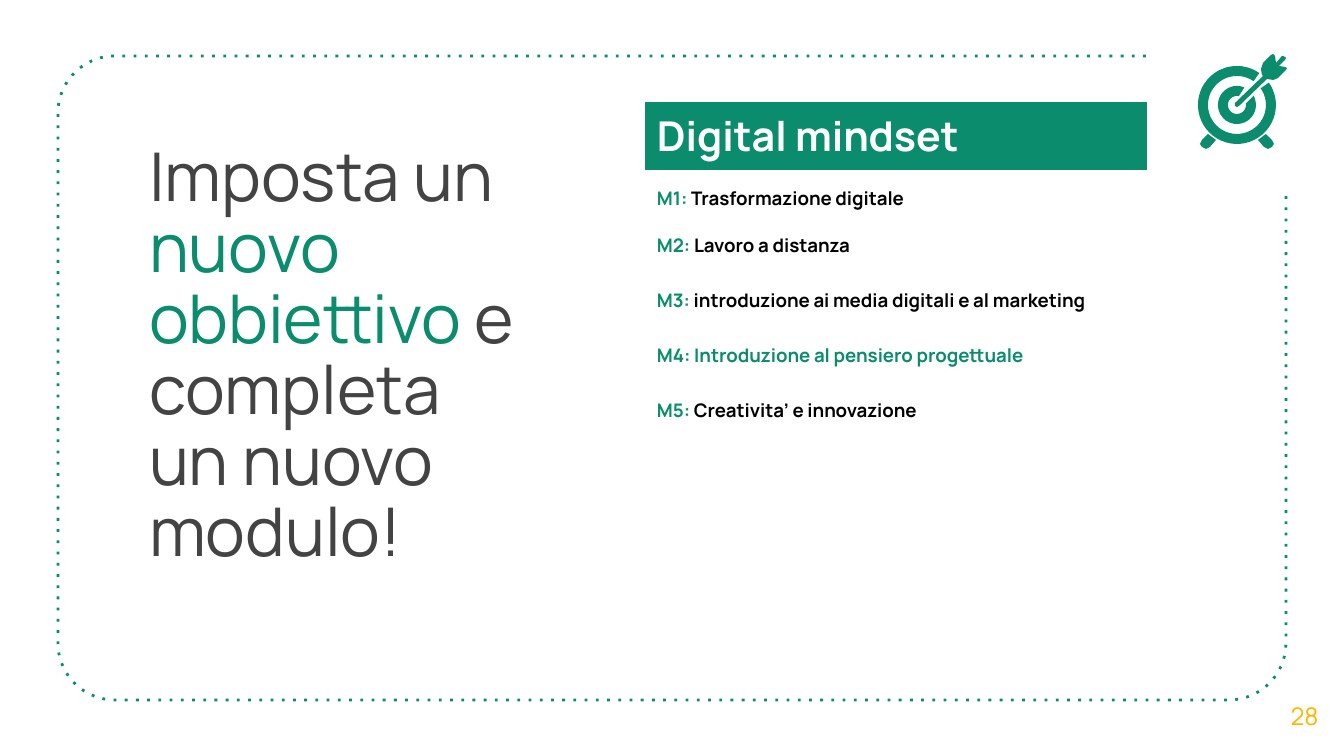
from dataclasses import dataclass
from math import cos, radians, sin

from pptx import Presentation
from pptx.dml.color import RGBColor
from pptx.enum.dml import MSO_LINE
from pptx.enum.text import MSO_ANCHOR, MSO_AUTO_SIZE, PP_ALIGN
from pptx.oxml.ns import qn
from pptx.util import Pt

TOP, MIDDLE = MSO_ANCHOR.TOP, MSO_ANCHOR.MIDDLE
LEFT, CENTER = PP_ALIGN.LEFT, PP_ALIGN.CENTER
DOT = MSO_LINE.ROUND_DOT
NO_FIT = MSO_AUTO_SIZE.NONE
SCALE = 914400 / 134.4


@dataclass(frozen=True)
class Theme:
    font: str = "Manrope"
    green: str = "0A8C6D"
    gray: str = "434343"
    gold: str = "FFB600"
    white: str = "FFFFFF"
    black: str = "000000"
    title: int = 36
    head: int = 22
    item: int = 10
    number: int = 13


THEME = Theme()

MODULES = [
    ("M1: ", "Trasformazione digitale", THEME.black),
    ("M2: ", "Lavoro a distanza", THEME.black),
    ("M3: ", "introduzione ai media digitali e al marketing", THEME.black),
    ("M4: ", "Introduzione al pensiero progettuale", THEME.green),
    ("M5: ", "Creativita’ e innovazione", THEME.black),
]

FOOT = [(1208, 134), (1202, 140), (1200, 144), (1202, 147), (1206, 149),
        (1210, 147), (1216, 140), (1212, 137)]
DART = [(1273, 54), (1271, 55), (1263, 63), (1262, 66), (1261, 69), (1262, 75),
        (1263, 76), (1235, 103), (1235, 106), (1237, 107), (1239, 106),
        (1267, 79), (1273, 80), (1276, 79), (1278, 78), (1286, 70), (1287, 68),
        (1285, 67), (1279, 66), (1285, 60), (1286, 58), (1285, 57), (1283, 56),
        (1282, 56), (1276, 63), (1275, 56)]


def px(value):
    return round(value * SCALE)


def color(code):
    return RGBColor.from_string(code)


def arc(x, y, radius, start, end, steps=48):
    turns = [radians(start + (end - start) * i / steps) for i in range(steps + 1)]
    return [(x + radius * cos(t), y - radius * sin(t)) for t in turns]


def ring(x, y, outer, inner):
    return arc(x, y, *outer) + arc(x, y, *inner)[::-1]


def add_outline(shapes, points, close):
    spots = [(px(x), px(y)) for x, y in points]
    build = shapes.build_freeform(*spots[0])
    build.add_line_segments(spots[1:], close=close)
    shape = build.convert_to_shape()
    shape.shadow.inherit = False
    return shape


def add_runs(para, runs, size, bold=False):
    for text, code in runs:
        run = para.add_run()
        run.text = text
        run.font.name = THEME.font
        run.font.size = Pt(size)
        run.font.bold = bold
        run.font.color.rgb = color(code)


def place(shape, left, top, width, height):
    shape.left, shape.top = px(left), px(top)
    shape.width, shape.height = px(width), px(height)


def set_frame(frame, anchor):
    frame.word_wrap = True
    frame.auto_size = NO_FIT
    frame.vertical_anchor = anchor
    frame.margin_left = frame.margin_right = px(13)
    frame.margin_top = frame.margin_bottom = px(13)


def add_border(slide):
    left, top, right, bottom, radius = 58, 56, 1286, 700, 57
    points = [(1146, top)]
    points += arc(left + radius, top + radius, radius, 90, 180)
    points += arc(left + radius, bottom - radius, radius, 180, 270)
    points += arc(right - radius, bottom - radius, radius, 270, 360)
    points.append((right, 196))
    shape = add_outline(slide.shapes, points, False)
    shape.fill.background()
    shape.line.color.rgb = color(THEME.green)
    shape.line.width = Pt(1.5)
    shape.line.dash_style = DOT
    next(shape.element.iter(qn("a:prstDash"))).set("val", "dot")


def add_title(slide):
    title = slide.shapes.title
    place(title, 136, 132, 399, 126)
    set_frame(title.text_frame, TOP)
    para = title.text_frame.paragraphs[0]
    para.alignment = LEFT
    para.line_spacing = 0.88
    add_runs(para, [("Imposta un ", THEME.gray),
                    ("nuovo obbiettivo ", THEME.green),
                    ("e completa un nuovo modulo!", THEME.gray)], THEME.title)


def add_number(slide):
    box = slide.shapes.add_textbox(px(1265), px(675), px(79), px(81))
    set_frame(box.text_frame, MIDDLE)
    para = box.text_frame.paragraphs[0]
    para.alignment = CENTER
    add_runs(para, [("28", THEME.gold)], THEME.number)


def add_target(slide):
    x, y = 1237, 105
    mirror = [(2 * x - left, top) for left, top in FOOT]
    parts = [ring(x, y, (39, 55, 395), (29, 55, 395)),
             ring(x, y, (19, 67, 389), (9, 78, 369)),
             FOOT, mirror, DART]
    group = slide.shapes.add_group_shape()
    for points in parts:
        shape = add_outline(group.shapes, points, True)
        shape.fill.solid()
        shape.fill.fore_color.rgb = color(THEME.green)
        shape.line.fill.background()


def fill_cell(cell, runs, size, anchor):
    cell.vertical_anchor = anchor
    cell.margin_left = cell.margin_right = px(13)
    cell.margin_top = cell.margin_bottom = px(7)
    cell.fill.background()
    add_runs(cell.text_frame.paragraphs[0], runs, size, True)


def add_modules(slide):
    count = len(MODULES) + 1
    table = slide.shapes.add_table(count, 1, px(644), px(101), px(504), px(55 * count)).table
    table.first_row = table.horz_banding = False
    head = table.cell(0, 0)
    fill_cell(head, [("Digital mindset", THEME.white)], THEME.head, MIDDLE)
    head.fill.solid()
    head.fill.fore_color.rgb = color(THEME.green)
    for row, (code, name, tone) in enumerate(MODULES, 1):
        anchor = MIDDLE if row == 1 else TOP
        fill_cell(table.cell(row, 0), [(code, THEME.green), (name, tone)], THEME.item, anchor)


def main():
    deck = Presentation()
    deck.slide_width, deck.slide_height = px(1344), px(756)
    slide = deck.slides.add_slide(deck.slide_layouts[5])
    add_border(slide)
    add_title(slide)
    add_number(slide)
    add_target(slide)
    add_modules(slide)
    deck.save("out.pptx")


if __name__ == "__main__":
    main()
